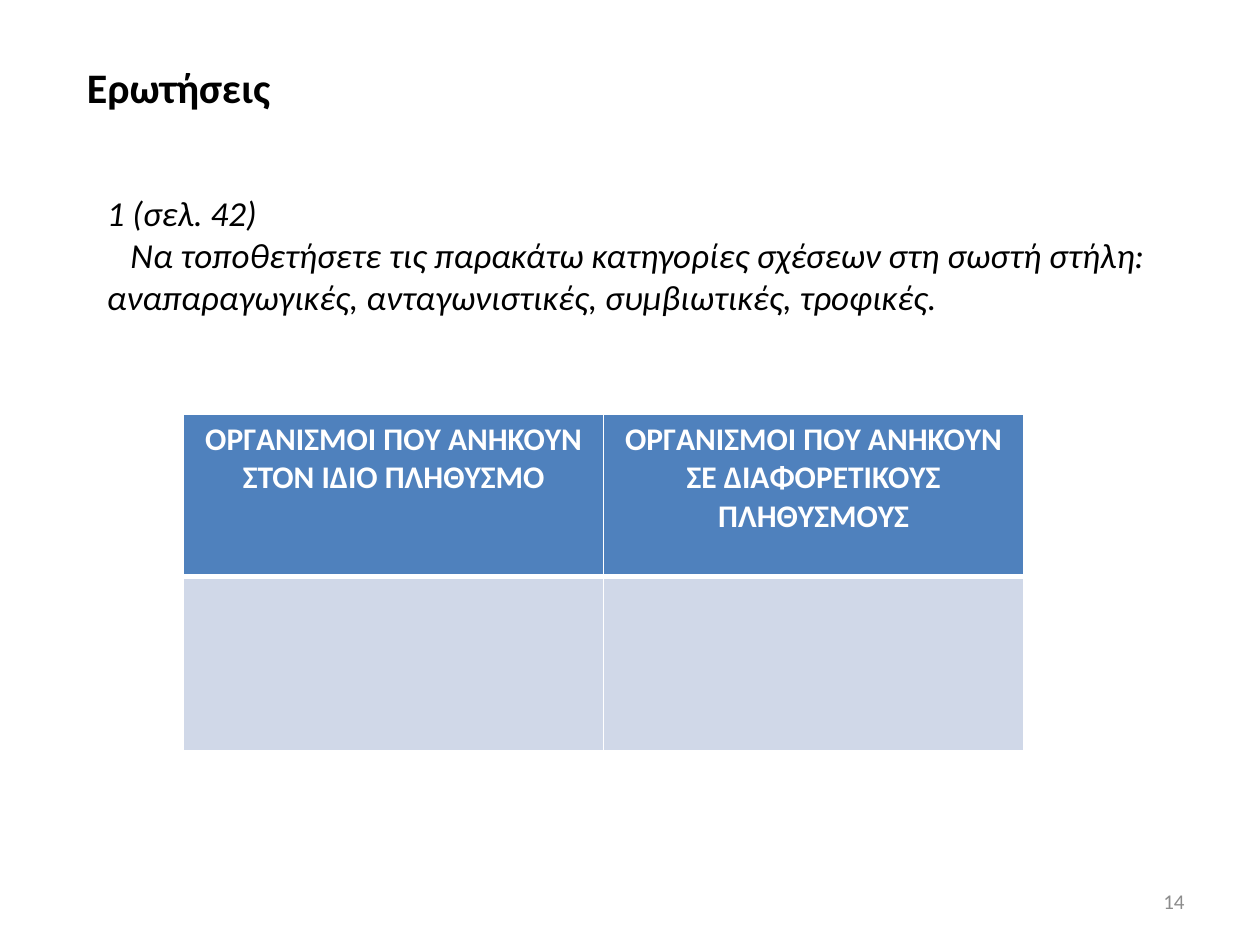
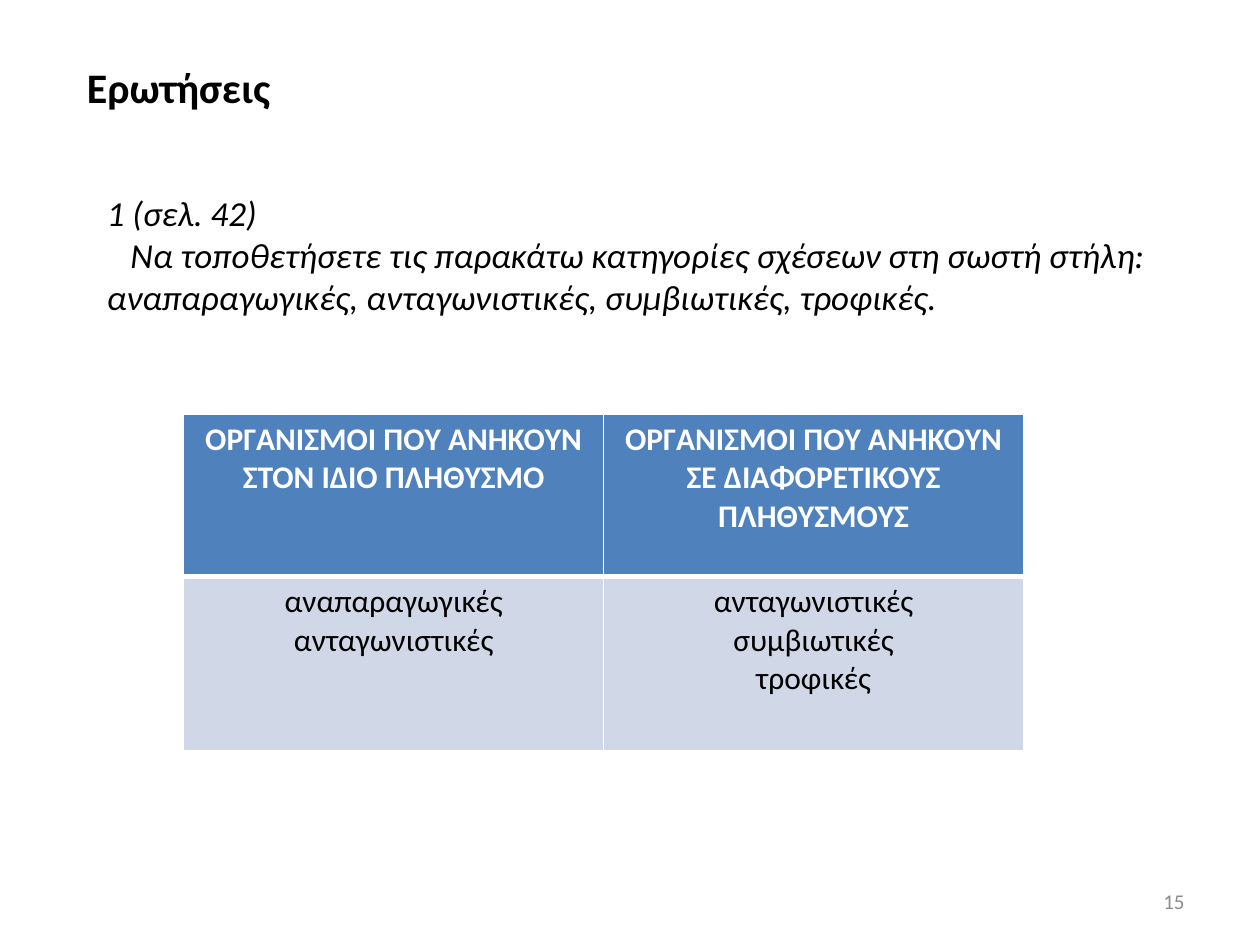
from dataclasses import dataclass
from lxml.etree import SubElement as Sub
from pptx import Presentation
from pptx.dml.color import RGBColor as RGB
from pptx.enum.text import MSO_ANCHOR as Anchor, MSO_AUTO_SIZE as Auto, PP_ALIGN as Align
from pptx.oxml.ns import qn
from pptx.util import Pt


@dataclass(frozen=True)
class Theme:
    font: str = "Calibri"
    black: str = "000000"
    white: str = "FFFFFF"
    gray: str = "8C8C8C"
    blue: str = "4F81BD"
    pale: str = "D0D8E8"
    title: int = 24
    body: int = 20
    cell: int = 18
    foot: int = 12
    thin: int = 1
    thick: int = 3


class Deck:
    def __init__(self, theme):
        self.theme = theme
        self.prs = Presentation()
        self.prs.slide_width, self.prs.slide_height = Pt(720), Pt(540)
        self.slide = None

    def page(self):
        self.slide = self.prs.slides.add_slide(self.prs.slide_layouts[5])

    def style(self, frame, size, color, align=Align.LEFT, bold=False, italic=False):
        for para in frame.paragraphs:
            para.alignment = align
            for run in para.runs:
                font = run.font
                font.name, font.size = self.theme.font, Pt(size)
                font.bold, font.italic = bold, italic
                font.color.rgb = RGB.from_string(color)

    def title(self, text):
        shape = self.slide.shapes.title
        shape.left, shape.top, shape.width, shape.height = Pt(42.5), Pt(31.5), Pt(120), Pt(36)
        frame = shape.text_frame
        frame.text = text
        frame.word_wrap, frame.auto_size = False, Auto.NONE
        frame.vertical_anchor = Anchor.TOP
        self.style(frame, self.theme.title, self.theme.black, bold=True)

    def text(self, text, box, size, color, anchor=Anchor.TOP, **look):
        frame = self.slide.shapes.add_textbox(*map(Pt, box)).text_frame
        frame.text = text
        frame.word_wrap, frame.vertical_anchor = True, anchor
        self.style(frame, size, color, **look)
        return frame

    def task(self, text):
        frame = self.text(text, (54, 106, 623.5, 220), self.theme.body,
                          self.theme.black, italic=True)
        # First-line indent of the question
        frame.paragraphs[1]._p.get_or_add_pPr().set("indent", str(Pt(13.5)))

    def number(self, num):
        self.text(str(num), (516, 500.5, 168, 28.5), self.theme.foot, self.theme.gray,
                  anchor=Anchor.MIDDLE, align=Align.RIGHT)

    def edge(self, cell, **widths):
        props = cell._tc.get_or_add_tcPr()
        for side in "LRTB":
            width = widths.get(side, self.theme.thin)
            line = Sub(props, qn(f"a:ln{side}"), w=str(Pt(width)))
            Sub(Sub(line, qn("a:solidFill")), qn("a:srgbClr"), val=self.theme.white)

    def table(self, rows):
        theme = self.theme
        high = (93, 99.5)
        grid = self.slide.shapes.add_table(
            len(rows), len(rows[0]), Pt(105), Pt(236.5), Pt(480), Pt(sum(high))).table
        # Fill, ink, bold and the thick side for the head and the body
        looks = ((theme.blue, theme.white, True, "B"), (theme.pale, theme.black, False, "T"))
        for r, (row, (fill, ink, bold, side)) in enumerate(zip(rows, looks)):
            grid.rows[r].height = Pt(high[r])
            for c, text in enumerate(row):
                cell = grid.cell(r, c)
                cell.text_frame.text = text
                self.style(cell.text_frame, theme.cell, ink, Align.CENTER, bold)
                self.edge(cell, **{side: theme.thick})
                cell.fill.solid()
                cell.fill.fore_color.rgb = RGB.from_string(fill)


TASK = ("1 (σελ. 42)\nΝα τοποθετήσετε τις παρακάτω κατηγορίες σχέσεων στη σωστή στήλη: "
        "αναπαραγωγικές, ανταγωνιστικές, συμβιωτικές, τροφικές.")
HEADS = ("ΟΡΓΑΝΙΣΜΟΙ ΠΟY ΑΝΗΚΟYΝ\vΣΤΟΝ ΙΔΙΟ ΠΛΗΘYΣΜΟ",
         "ΟΡΓΑΝΙΣΜΟΙ ΠΟY ΑΝΗΚΟYΝ\vΣΕ ΔΙΑΦΟΡΕΤΙΚΟYΣ ΠΛΗΘYΣΜΟYΣ")
BLANK = ("", "")
REPLY = ("αναπαραγωγικές\nανταγωνιστικές", "ανταγωνιστικές\nσυμβιωτικές\nτροφικές")


def main():
    deck = Deck(Theme())
    # Question first, then the same page with its answers
    for num, cells in enumerate((BLANK, REPLY), start=14):
        deck.page()
        deck.title("Ερωτήσεις")
        deck.task(TASK)
        deck.number(num)
        deck.table((HEADS, cells))
    deck.prs.save("out.pptx")


if __name__ == "__main__":
    main()
